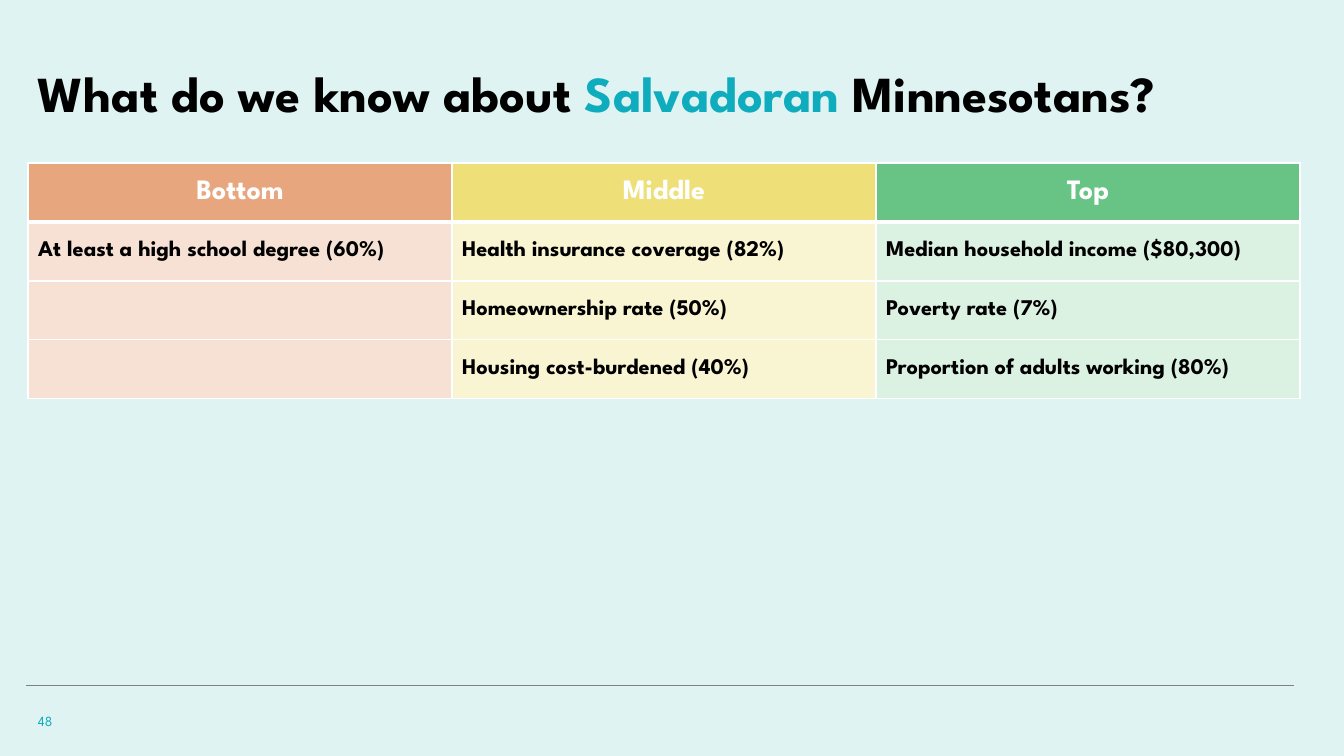
from lxml.etree import SubElement
from pptx import Presentation
from pptx.dml.color import RGBColor
from pptx.enum.shapes import MSO_CONNECTOR as Connector
from pptx.enum.text import MSO_ANCHOR as Anchor, PP_ALIGN as Align
from pptx.oxml.ns import qn
from pptx.util import Pt

PX = 914400 / 100.8
FONT = "League Spartan"
COLORS = {
    "background": "DFF4F2",
    "rule": "808080",
    "text": "000000",
    "accent": "0FACBD",
    "white": "FFFFFF",
}
COLUMNS = [
    ("Bottom", "E8A67F", "F7E1D4", ["At least a high school degree (60%)"]),
    ("Middle", "EEDF79", "F9F4D2", [
        "Health insurance coverage (82%)",
        "Homeownership rate (50%)",
        "Housing cost-burdened (40%)",
    ]),
    ("Top", "68C484", "DBF1E2", [
        "Median household income ($80,300)",
        "Poverty rate (7%)",
        "Proportion of adults working (80%)",
    ]),
]
ROW_COUNT = 4
COLUMN_WIDTH, ROW_HEIGHT = 424, 59


def px(*lengths):
    return [round(length * PX) for length in lengths]


def style(font, size, color, bold=True):
    font.name, font.size, font.bold = FONT, Pt(size), bold
    font.color.rgb = RGBColor.from_string(color)


presentation = Presentation()
presentation.slide_width, presentation.slide_height = px(1344, 756)
slide = presentation.slides.add_slide(presentation.slide_layouts[6])
slide.background.fill.solid()
slide.background.fill.fore_color.rgb = RGBColor.from_string(COLORS["background"])

footer_rule = slide.shapes.add_connector(Connector.STRAIGHT, *px(26, 685, 1294, 685))
footer_rule.line.width = Pt(0.5)
footer_rule.line.color.rgb = RGBColor.from_string(COLORS["rule"])
SubElement(footer_rule._element.spPr, qn("a:effectLst"))

title = slide.shapes.add_textbox(*px(28, 40, 1295, 88)).text_frame
title.word_wrap = True
title.vertical_anchor = Anchor.BOTTOM
paragraph = title.paragraphs[0]
paragraph.line_spacing = 0.9
for text, color in [
    ("What do we know about ", "text"),
    ("Salvadoran", "accent"),
    (" Minnesotans?", "text"),
]:
    run = paragraph.add_run()
    run.text = text
    style(run.font, 36, COLORS[color])

table = slide.shapes.add_table(
    ROW_COUNT, len(COLUMNS),
    *px(28, 163, COLUMN_WIDTH * len(COLUMNS), ROW_HEIGHT * ROW_COUNT),
).table
for row in table.rows:
    row.height = px(ROW_HEIGHT)[0]

for column_index, (heading, header_fill, body_fill, measures) in enumerate(COLUMNS):
    table.columns[column_index].width = px(COLUMN_WIDTH)[0]
    for row_index in range(ROW_COUNT):
        is_header = row_index == 0
        cell = table.cell(row_index, column_index)
        cell.vertical_anchor = Anchor.MIDDLE
        for side in "LRTB":
            thick = (row_index, side) in [(0, "B"), (1, "T")]
            border = SubElement(
                cell._tc.get_or_add_tcPr(), qn(f"a:ln{side}"), w=str(Pt(3 if thick else 1))
            )
            SubElement(SubElement(border, qn("a:solidFill")), qn("a:srgbClr"), val=COLORS["white"])
        cell.fill.solid()
        cell.fill.fore_color.rgb = RGBColor.from_string(header_fill if is_header else body_fill)
        paragraph = cell.text_frame.paragraphs[0]
        if is_header:
            paragraph.text = heading
            paragraph.alignment = Align.CENTER
            style(paragraph.font, 20, COLORS["white"])
        else:
            if row_index <= len(measures):
                paragraph.text = measures[row_index - 1]
            style(paragraph.font, 16, COLORS["text"])

page_number = slide.shapes.add_textbox(*px(28, 701, 302, 40)).text_frame
page_number.word_wrap = True
page_number.vertical_anchor = Anchor.MIDDLE
paragraph = page_number.paragraphs[0]
paragraph.text = "48"
style(paragraph.font, 10, COLORS["accent"], bold=False)

presentation.save("out.pptx")
